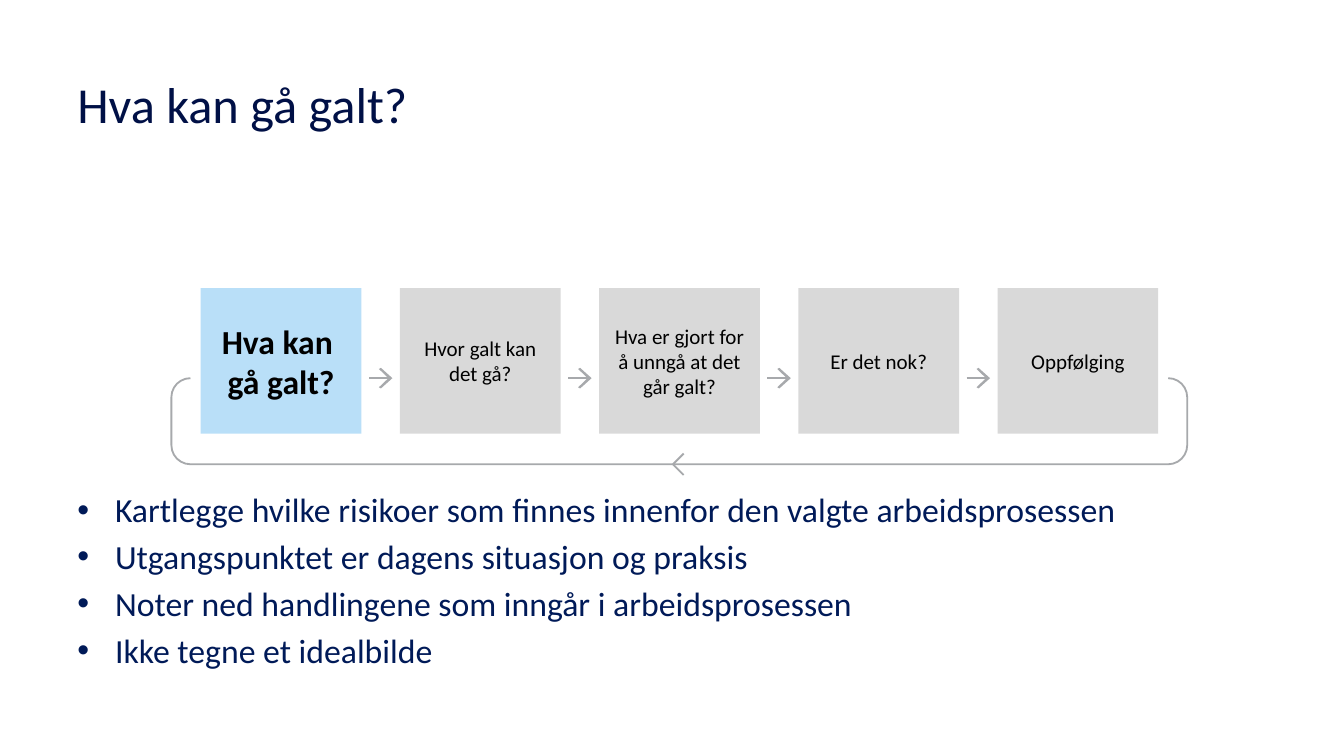
from math import cos, radians, sin

from lxml.etree import SubElement
from pptx import Presentation
from pptx.dml.color import RGBColor
from pptx.enum.shapes import MSO_CONNECTOR as CONN, MSO_SHAPE as SHAPE
from pptx.enum.text import MSO_ANCHOR as ANCHOR, PP_ALIGN as ALIGN
from pptx.oxml.ns import qn
from pptx.util import Cm, Pt

COLORS = {
    "title": "001046",
    "body": "001A58",
    "label": "000000",
    "active": "B9DFF8",
    "step": "D9D9D9",
    "arrow": "A7A9AC",
}
STEPS = [
    ["Hva kan ", "gå galt?"],
    ["Hvor galt kan det gå?"],
    ["Hva er gjort for å unngå at det går galt?"],
    ["Er det nok?"],
    ["Oppfølging"],
]
BULLETS = [
    "Kartlegge hvilke risikoer som finnes innenfor den valgte arbeidsprosessen",
    "Utgangspunktet er dagens situasjon og praksis",
    "Noter ned handlingene som inngår i arbeidsprosessen",
    "Ikke tegne et idealbilde",
]
STEP_LEFT, STEP_TOP, STEP_W, STEP_H = 5.06, 7.26, 4.05, 3.67
PITCH = 5.02
ARROW_LEFT, ARROW_Y = 9.3, 9.53
LOOP_LEFT, LOOP_RIGHT, LOOP_BOTTOM, RADIUS = 4.32, 29.92, 11.7, 0.48


class SlideBuilder:
    font = "Calibri"

    def __init__(self, slide):
        self.shapes = slide.shapes

    def color(self, name):
        return RGBColor.from_string(COLORS[name])

    def paint_line(self, line, width):
        line.color.rgb = self.color("arrow")
        line.width = Pt(width)

    def add_lines(self, tf, lines, size, color, bold=False, align=ALIGN.LEFT, bullets=False):
        tf.word_wrap = True
        for i, text in enumerate(lines):
            p = tf.paragraphs[0] if i == 0 else tf.add_paragraph()
            p.alignment = align
            if bullets:
                if i:
                    p.space_before = Pt(4.6)
                self.add_bullet(p)
            r = p.add_run()
            r.text = text
            r.font.name = self.font
            r.font.size = Pt(size)
            r.font.bold = bold
            r.font.color.rgb = self.color(color)

    def add_bullet(self, p):
        pPr = p._p.get_or_add_pPr()
        pPr.set("marL", str(Cm(0.95)))
        pPr.set("indent", str(-Cm(0.95)))
        SubElement(pPr, qn("a:buFont")).set("typeface", "Arial")
        SubElement(pPr, qn("a:buChar")).set("char", "•")

    def text(self, x, y, w, h, lines, size, color, anchor=ANCHOR.TOP, bullets=False):
        sp = self.shapes.add_textbox(Cm(x), Cm(y), Cm(w), Cm(h))
        sp.text_frame.vertical_anchor = anchor
        self.add_lines(sp.text_frame, lines, size, color, bullets=bullets)

    def step(self, x, lines, active):
        sp = self.shapes.add_shape(
            SHAPE.RECTANGLE, Cm(x), Cm(STEP_TOP), Cm(STEP_W), Cm(STEP_H))
        sp.shadow.inherit = False
        sp.fill.solid()
        sp.fill.fore_color.rgb = self.color("active" if active else "step")
        sp.line.fill.background()
        sp.text_frame.vertical_anchor = ANCHOR.MIDDLE
        self.add_lines(sp.text_frame, lines, 24 if active else 15, "label",
                       bold=active, align=ALIGN.CENTER)

    def outline(self, points, width=None):
        pts = [(Cm(x), Cm(y)) for x, y in points]
        builder = self.shapes.build_freeform(*pts[0])
        builder.add_line_segments(pts[1:], close=width is None)
        sp = builder.convert_to_shape()
        sp.shadow.inherit = False
        if width is None:
            sp.fill.solid()
            sp.fill.fore_color.rgb = self.color("arrow")
            sp.line.fill.background()
        else:
            sp.fill.background()
            self.paint_line(sp.line, width)

    def arrow(self, x, y):
        cx = self.shapes.add_connector(CONN.STRAIGHT, Cm(x), Cm(y), Cm(x + 0.51), Cm(y))
        self.paint_line(cx.line, 1.19)
        SubElement(cx._element.spPr, qn("a:effectLst"))
        head = [(0.3, -0.26), (0.25, -0.23), (0.49, 0), (0.25, 0.23), (0.3, 0.26), (0.59, 0)]
        self.outline([(x + dx, y + dy) for dx, dy in head])

    def return_loop(self):
        left, right = LOOP_LEFT + RADIUS, LOOP_RIGHT - RADIUS
        top, bottom = ARROW_Y + RADIUS, LOOP_BOTTOM - RADIUS
        corners = [(right, top, -90), (right, bottom, 0), (left, bottom, 90), (left, top, 180)]
        self.outline([
            (cx + RADIUS * cos(radians(start + turn)), cy + RADIUS * sin(radians(start + turn)))
            for cx, cy, start in corners
            for turn in range(0, 91, 15)
        ], 1.31)
        tip = 16.96
        self.outline([(tip + 0.27, LOOP_BOTTOM + 0.27), (tip, LOOP_BOTTOM),
                      (tip + 0.27, LOOP_BOTTOM - 0.27)], 1.31)


def main():
    prs = Presentation()
    prs.slide_width, prs.slide_height = Cm(33.87), Cm(19.05)
    s = SlideBuilder(prs.slides.add_slide(prs.slide_layouts[6]))
    s.return_loop()
    for i in range(len(STEPS) - 1):
        s.arrow(ARROW_LEFT + i * PITCH, ARROW_Y)
    for i, lines in enumerate(STEPS):
        s.step(STEP_LEFT + i * PITCH, lines, active=i == 0)
    s.text(1.7, 1.02, 30.48, 3.15, ["Hva kan gå galt?"], 36, "title", anchor=ANCHOR.MIDDLE)
    s.text(1.7, 12.2, 30.48, 4.22, BULLETS, 24.1, "body", bullets=True)
    prs.save("out.pptx")


if __name__ == "__main__":
    main()
